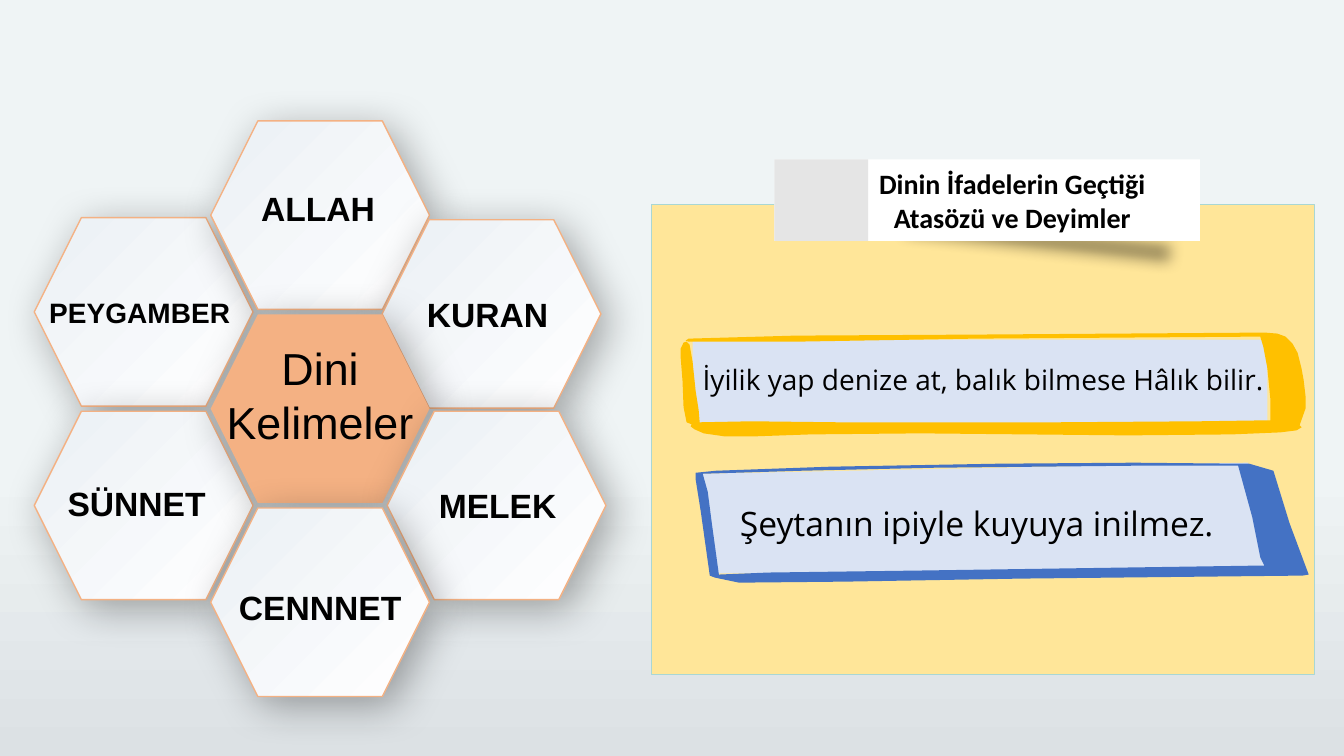
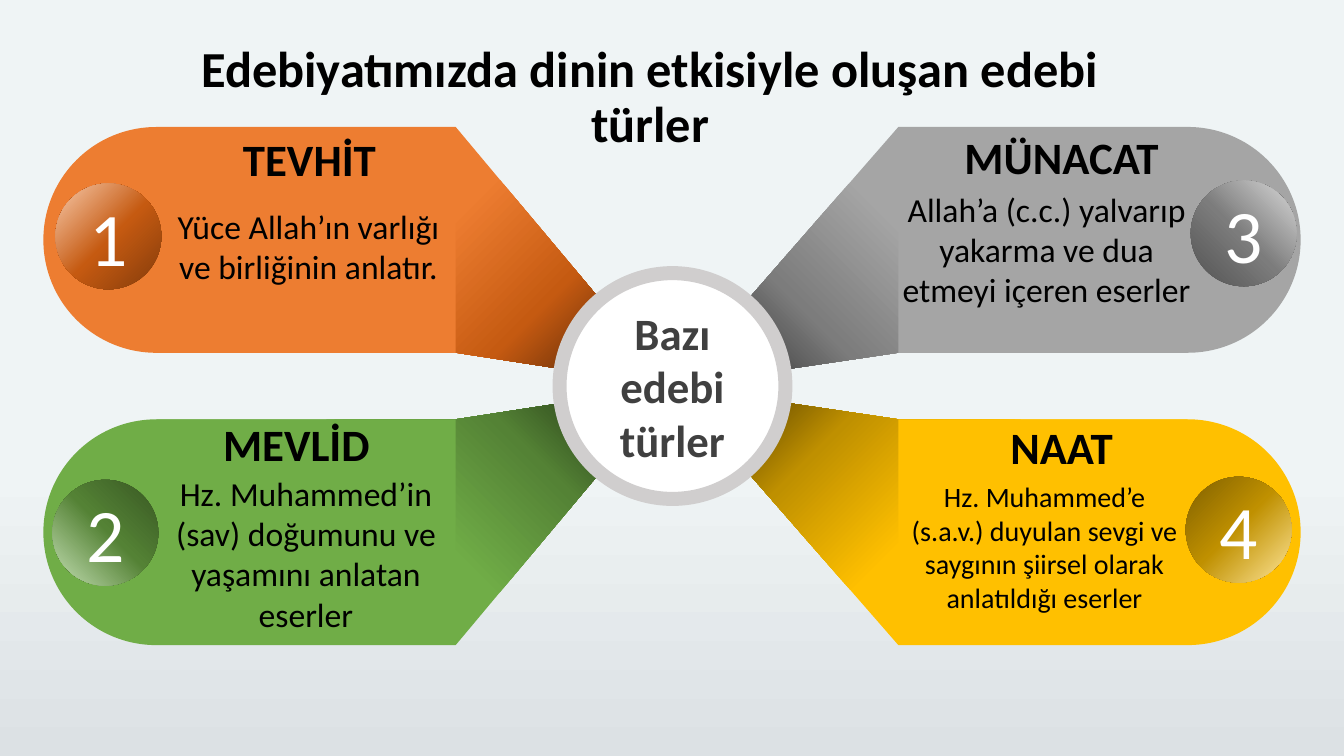
import dataclasses

import lxml.etree
import pptx
import pptx.dml.color
import pptx.enum.shapes
import pptx.enum.text
import pptx.oxml.ns
import pptx.util

Inches = pptx.util.Inches
Pt = pptx.util.Pt
SHAPE = pptx.enum.shapes.MSO_SHAPE
ALIGN = pptx.enum.text.PP_ALIGN
ANCHOR = pptx.enum.text.MSO_ANCHOR
qn = pptx.oxml.ns.qn

BLACK, WHITE = "000000", "FFFFFF"
PEACH, PANEL, PALE_BLUE = "F4B183", "FFE699", "DAE3F3"
TITLE_STYLE = dict(size=36, bold=True, spacing=0.9, anchor=ANCHOR.TOP)
HEADING_STYLE = dict(size=32, bold=True, anchor=ANCHOR.BOTTOM, insets=(0, 0.05, 0, 0.05))
LABEL_STYLE = dict(font="Arial", insets=(0, 0, 0, 0))
PROVERB_STYLE = dict(font="Open Sans", align=ALIGN.LEFT, anchor=ANCHOR.TOP, wrap=False)


@dataclasses.dataclass
class Gradient:
    stops: tuple
    angle: int = 0
    focus: tuple = ()


@dataclasses.dataclass
class Shadow:
    alpha: int
    blur: int
    distance: int
    angle: int


@dataclasses.dataclass
class Card:
    number: str
    heading: str
    body: str
    box: tuple
    tones: tuple
    side: int
    focus: tuple
    badge_at: tuple
    badge_angle: int
    heading_at: tuple
    body_box: tuple
    body_size: int = 24


BACKDROP = Gradient(((62, "EFF4F5"), (100, "DCE1E4")), angle=90)
HEXAGON_FILL = Gradient(((0, "EBF0F5"), (100, WHITE)), angle=45)
HEXAGON_SHADOW = Shadow(32, 30, 8, 45)
TAG_SHADOW = Shadow(41, 11, 15, 80)

HEXAGON_SIZE = (2.17, 1.87)
HEXAGONS = [
    ("PEYGAMBER", (-1.75, -0.96), (-0.04, 0), 20),
    ("SÜNNET", (-1.75, 0.96), (-0.07, -0.02), 24),
    ("ALLAH", (0, -1.92), (-0.02, -0.07), 24),
    ("KURAN", (1.7, -0.94), (-0.04, 0), 24),
    ("Dini Kelimeler", (0, 0), (0, -0.14), 32),
    ("MELEK", (1.75, 0.96), (0.01, 0), 24),
    ("CENNNET", (0, 1.92), (0, 0.05), 24),
]

YELLOW_FRAME = [[
    (6.18, 0.47), (6.16, 0.36), (6.12, 0.2), (6.07, 0.11), (6, 0.04), (5.92, 0.01),
    (5.8, 0), (5.76, 0), (2.92, 0.02), (1.14, 0.03), (0.08, 0.06), (0.05, 0.08),
    (0.08, 0.09), (1.15, 0.09), (2.92, 0.06), (5.75, 0.04), (5.78, 0.14), (5.82, 0.35),
    (5.85, 0.66), (5.85, 0.87), (5.14, 0.88), (3.72, 0.89), (1.57, 0.89), (0.7, 0.88),
    (0.19, 0.89), (0.18, 0.77), (0.15, 0.58), (0.12, 0.29), (0.09, 0.12), (0.06, 0.09),
    (0.03, 0.1), (0, 0.16), (0, 0.23), (0.02, 0.48), (0.03, 0.74), (0.06, 0.89),
    (0.11, 0.91), (0.1, 0.93), (0.14, 0.96), (0.23, 1), (0.44, 1.03), (0.72, 1.03),
    (1.29, 1.01), (2.38, 1), (4.44, 1.02), (5.47, 1.01), (5.95, 0.99), (6.11, 0.97),
    (6.16, 0.94), (6.14, 0.92), (6.2, 0.75), (6.2, 0.64),
]]
BLUE_FRAME = [
    [(4.36, 0.03), (2.37, 0.05), (1.05, 0.08), (0.07, 0.11), (0.12, 0.29), (0.16, 0.6),
     (0.23, 1.11), (0.72, 1.09), (2.21, 1.07), (5.64, 1.02), (5.6, 0.94), (5.52, 0.54),
     (5.38, 0.03)],
    [(4.35, 0), (5.38, 0.01), (5.49, 0.01), (5.73, 0.08), (5.77, 0.21), (5.89, 0.6),
     (6.08, 1.11), (6.02, 1.12), (3.22, 1.15), (1.49, 1.18), (0.43, 1.19), (0.19, 1.14),
     (0.14, 1.12), (0.05, 0.48), (0, 0.17), (0, 0.1), (0.2, 0.08), (1.33, 0.04),
     (3.01, 0.01)],
]
BLUE_FIELD = [[(0.07, 0.11), (5.48, 0), (5.73, 1.07), (0.18, 1.1)]]

HUB = (6.67, 3.83)
LEFT, RIGHT = -1, 1
CARDS = [
    Card("3", "MÜNACAT", "Allah’a (c.c.) yalvarıp yakarma ve dua etmeyi içeren eserler",
         (8.91, 1.26, 3.99, 2.24), ("525252", "7C7C7C", "A5A5A5", "DBDBDB"), RIGHT,
         (0, 100, 100, 0), (2.9, 0.53), 315, (0.57, -0.03), (-0.09, 0.56, 3.12, 1.31)),
    Card("4", "NAAT", "Hz. Muhammed’e (s.a.v.) duyulan sevgi ve saygının şiirsel olarak anlatıldığı eserler",
         (8.91, 4.16, 3.99, 2.24), ("806000", "BF9000", "FFC000", "FFE699"), RIGHT,
         (0, 0, 100, 100), (2.85, 0.57), 45, (0.57, -0.05), (0.03, 0.55, 2.84, 1.45), 20),
    Card("2", "MEVLİD", "Hz. Muhammed’in (sav) doğumunu ve yaşamını anlatan eserler",
         (0.43, 4.16, 4.09, 2.24), ("385723", "548235", "70AD47", "C5E0B4"), LEFT,
         (100, 0, 0, 100), (0.09, 0.6), 135, (1.46, -0.08), (1.07, 0.48, 3.07, 1.72)),
    Card("1", "TEVHİT", "Yüce Allah’ın varlığı ve birliğinin anlatır.",
         (0.43, 1.26, 4.09, 2.24), ("843C0B", "C55A11", "ED7D31", "F8CBAD"), LEFT,
         (100, 100, 0, 0), (0.12, 0.56), 225, (1.59, -0.01), (1.15, 0.73, 2.96, 0.91)),
]


def rgb(value):
    return pptx.dml.color.RGBColor.from_string(value)


def node(parent, tag, **attributes):
    values = {key: str(value) for key, value in attributes.items()}
    return lxml.etree.SubElement(parent, qn(tag), values)


def paint(fill, owner, value):
    if isinstance(value, str):
        fill.solid()
        fill.fore_color.rgb = rgb(value)
        return
    fill.gradient()
    gradient = next(owner.iter(qn("a:gradFill")))
    for child in list(gradient):
        gradient.remove(child)
    stops = node(gradient, "a:gsLst")
    for position, color in value.stops:
        node(node(stops, "a:gs", pos=position * 1000), "a:srgbClr", val=color)
    if value.focus:
        center = dict(zip("ltrb", (edge * 1000 for edge in value.focus)))
        node(node(gradient, "a:path", path="circle"), "a:fillToRect", **center)
    else:
        node(gradient, "a:lin", ang=value.angle * 60000, scaled=0)


def finish(shape, fill, line=None, line_width=1, shadow=None):
    paint(shape.fill, shape.element, fill)
    if line:
        shape.line.color.rgb = rgb(line)
        shape.line.width = Pt(line_width)
    else:
        shape.line.fill.background()
    shape.shadow.inherit = False
    if shadow:
        effects = next(shape.element.iter(qn("a:effectLst")))
        outer = node(effects, "a:outerShdw", blurRad=Pt(shadow.blur), dist=Pt(shadow.distance),
                     dir=shadow.angle * 60000, algn="ctr", rotWithShape=0)
        node(node(outer, "a:srgbClr", val=BLACK), "a:alpha", val=shadow.alpha * 1000)
    return shape


def draw(slide, kind, box, fill, **finishing):
    return finish(slide.shapes.add_shape(kind, *map(Inches, box)), fill, **finishing)


def outline(slide, origin, contours, fill):
    builder = None
    for contour in contours:
        points = [(Inches(origin[0] + x), Inches(origin[1] + y)) for x, y in contour]
        if builder is None:
            builder = slide.shapes.build_freeform(*points[0])
        else:
            builder.move_to(*points[0])
        builder.add_line_segments(points[1:], close=True)
    return finish(builder.convert_to_shape(), fill)


def write(shape, content, size=24, font="Calibri", color=BLACK, bold=False, align=ALIGN.CENTER,
          anchor=ANCHOR.MIDDLE, insets=(0.1, 0.05, 0.1, 0.05), wrap=True, spacing=None):
    frame = shape.text_frame
    frame.auto_size = pptx.enum.text.MSO_AUTO_SIZE.NONE
    frame.word_wrap = wrap
    frame.vertical_anchor = anchor
    frame.margin_left, frame.margin_top, frame.margin_right, frame.margin_bottom = map(Inches, insets)
    paragraph = frame.paragraphs[0]
    paragraph.alignment = align
    if spacing:
        paragraph.line_spacing = spacing
    run = paragraph.add_run()
    run.text = content
    run.font.name, run.font.size, run.font.bold = font, Pt(size), bold
    run.font.color.rgb = rgb(color)


def text(slide, content, box, **style):
    write(slide.shapes.add_textbox(*map(Inches, box)), content, **style)


def honeycomb(slide, left, top):
    width, height = HEXAGON_SIZE
    for word, (dx, dy), _, _ in HEXAGONS:
        central = (dx, dy) == (0, 0)
        draw(slide, SHAPE.HEXAGON, (left + dx, top + dy, width, height),
             PEACH if central else HEXAGON_FILL, line=None if central else PEACH,
             shadow=HEXAGON_SHADOW)
    for word, (dx, dy), (shift_x, shift_y), size in HEXAGONS:
        text(slide, word, (left + dx + shift_x + 0.04, top + dy + shift_y, 2.09, height),
             size=size, bold=(dx, dy) != (0, 0), **LABEL_STYLE)


def tag(slide, left, top, width, height):
    lift = draw(slide, SHAPE.RECTANGLE, (left + 1.27, top + 0.51, 2.62, 0.16), "5B9BD5",
                shadow=TAG_SHADOW)
    lift.rotation = 6
    label = draw(slide, SHAPE.RECTANGLE, (left, top, width, height), WHITE)
    write(label, "Dinin İfadelerin Geçtiği Atasözü ve Deyimler", size=20, bold=True,
          insets=(0.75, 0.05, 0.25, 0.05))
    draw(slide, SHAPE.RECTANGLE, (left, top, 0.93, height), "E5E5E5")


def proverbs(slide, left, top, width, height):
    draw(slide, SHAPE.RECTANGLE, (left, top, width, height), PANEL, line="A9D7D4")
    tag(slide, left + 1.22, top - 0.45, 4.22, 0.81)

    yellow = (left + 0.29, top + 1.27)
    draw(slide, SHAPE.RECTANGLE, (yellow[0] + 0.12, yellow[1] + 0.07, 5.7, 0.83), PALE_BLUE)
    outline(slide, yellow, YELLOW_FRAME, "FFC000")
    text(slide, "İyilik yap denize at, balık bilmese Hâlık bilir.",
         (yellow[0] + 0.12, yellow[1] + 0.25, 5.81, 0.44), size=20, **PROVERB_STYLE)

    blue = (left + 0.44, top + 2.56)
    outline(slide, blue, BLUE_FIELD, PALE_BLUE)
    outline(slide, blue, BLUE_FRAME, "4472C4")
    text(slide, "Şeytanın ipiyle kuyuya inilmez.",
         (blue[0] + 0.34, blue[1] + 0.35, 4.96, 0.5), **PROVERB_STYLE)


def genre_card(slide, card):
    left, top, width, height = card.box
    dark, middle, base, light = card.tones
    radius = height / 2
    inner, outer = left, left + width - radius
    if card.side == LEFT:
        inner, outer = left + width, left + radius
    bottom = top + height
    outline(slide, (0, 0), [[HUB, (inner, top), (outer, top), (outer, bottom), (inner, bottom)]],
            Gradient(((16, dark), (27, middle), (50, base)), focus=card.focus))

    pill = draw(slide, SHAPE.ROUND_2_SAME_RECTANGLE,
                (left + (width - height) / 2, top + (height - width) / 2, height, width), base)
    pill.adjustments[0] = 0.5
    pill.rotation = 90 * card.side

    badge = draw(slide, SHAPE.OVAL, (left + card.badge_at[0], top + card.badge_at[1], 1.05, 1.05),
                 Gradient(((0, dark), (48, middle), (100, light)), angle=card.badge_angle))
    write(badge, card.number, size=54, color=WHITE)

    text(slide, card.heading, (left + card.heading_at[0], top + card.heading_at[1], 2.1, 0.64),
         **HEADING_STYLE)
    x, y, body_width, body_height = card.body_box
    text(slide, card.body, (left + x, top + y, body_width, body_height),
         size=card.body_size, anchor=ANCHOR.TOP)


def words_slide(deck):
    slide = deck.slides.add_slide(deck.slide_layouts[6])
    honeycomb(slide, 2.09, 3.12)
    proverbs(slide, 6.46, 2.03, 6.58, 4.66)


def genres_slide(deck):
    slide = deck.slides.add_slide(deck.slide_layouts[5])
    title = slide.shapes.title
    title.left, title.top, title.width, title.height = map(Inches, (1.35, 0.39, 10.2, 0.55))
    write(title, "Edebiyatımızda dinin etkisiyle oluşan edebi türler", **TITLE_STYLE)
    for card in CARDS:
        genre_card(slide, card)
    hub = draw(slide, SHAPE.OVAL, (HUB[0] - 1.12, HUB[1] - 1.12, 2.24, 2.24), WHITE,
               line="D0CECE", line_width=10)
    write(hub, "Bazı edebi türler", size=32, bold=True, color="404040")


def main():
    deck = pptx.Presentation()
    deck.slide_width, deck.slide_height = Inches(13.33), Inches(7.5)
    master = deck.slide_master
    paint(master.background.fill, master.element, BACKDROP)
    words_slide(deck)
    genres_slide(deck)
    deck.save("out.pptx")


if __name__ == "__main__":
    main()
